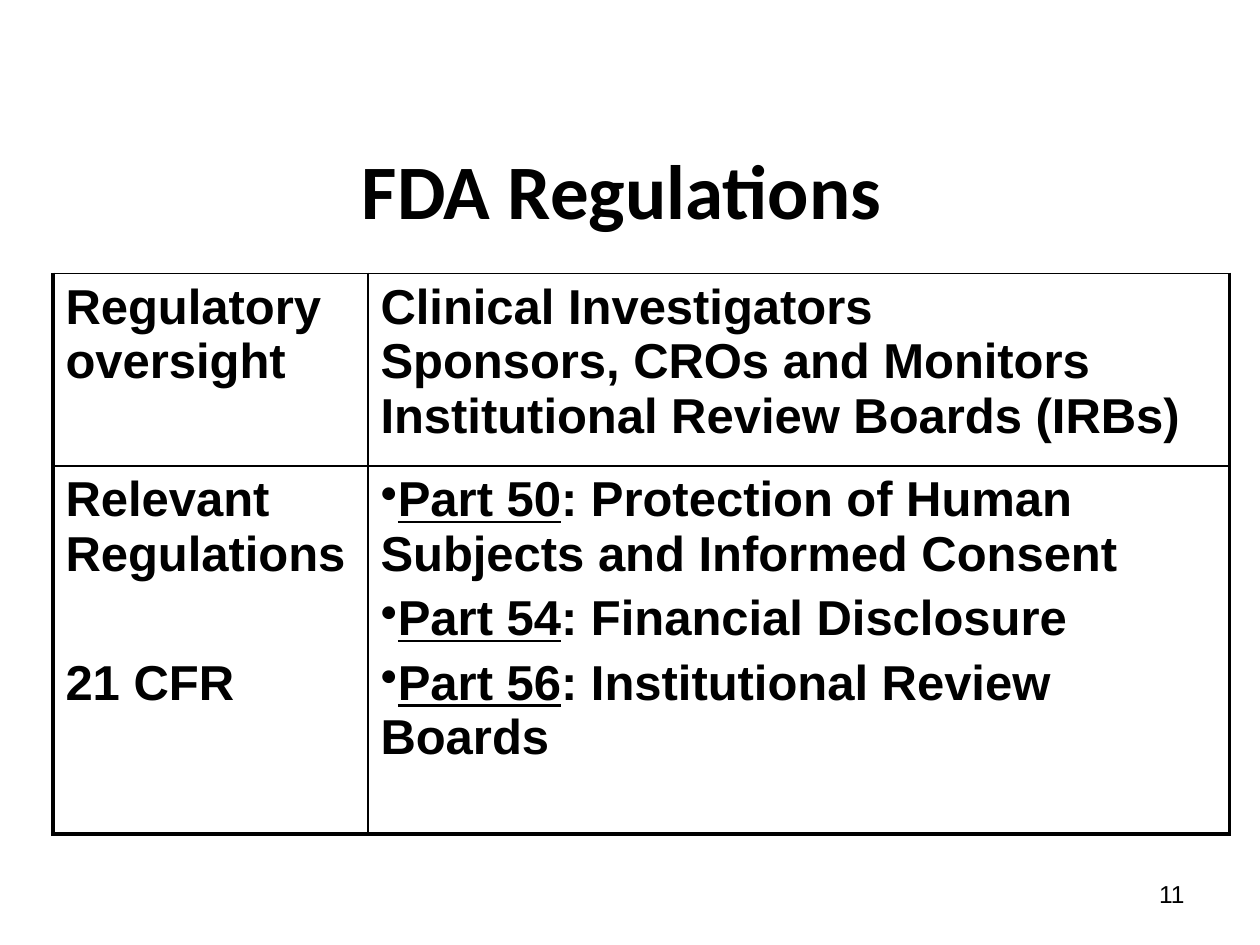
import pptx
import pptx.dml.color
import pptx.enum.text
import pptx.oxml
import pptx.oxml.ns
import pptx.util
from pptx.util import Inches, Pt

BLACK = "000000"
SPACE_BEFORE = 5.6
BLANK_LINE_GAP = 42.4


def style(paragraph, font_name, size, bold):
    paragraph.font.name = font_name
    paragraph.font.size = Pt(size)
    paragraph.font.bold = bold
    paragraph.font.color.rgb = pptx.dml.color.RGBColor.from_string(BLACK)


def add_xml(parent, index, xml):
    """Insert a DrawingML fragment into parent at the given child index."""
    namespace = pptx.oxml.ns.nsdecls("a")
    parent.insert(index, pptx.oxml.parse_xml(xml.replace(" ", f" {namespace} ", 1)))


deck = pptx.Presentation()
deck.slide_width = Inches(10)
deck.slide_height = Inches(7.5)
slide = deck.slides.add_slide(deck.slide_layouts[6])

# Title and page number: text, left, top, width, height, alignment, font, size, bold
align = pptx.enum.text.PP_ALIGN
labels = [
    ("11", 7.17, 6.83, 2.33, 0.52, align.RIGHT, "Arial", 14, False),
    ("FDA Regulations", 0.84, 1, 8.19, 1, align.CENTER, "Calibri", 44, True),
]
for text, left, top, width, height, alignment, font_name, size, bold in labels:
    box = slide.shapes.add_textbox(Inches(left), Inches(top), Inches(width), Inches(height))
    frame = box.text_frame
    frame.word_wrap = True
    frame.vertical_anchor = pptx.enum.text.MSO_ANCHOR.MIDDLE
    paragraph = frame.paragraphs[0]
    paragraph.text = text
    paragraph.alignment = alignment
    style(paragraph, font_name, size, bold)

# Each paragraph: underlined lead (makes it a bullet), text, space before in points
rows = [
    [
        [("", "Regulatory oversight", SPACE_BEFORE)],
        [
            ("", "Clinical Investigators", 0),
            ("", "Sponsors, CROs and Monitors", 0),
            ("", "Institutional Review Boards (IRBs)", 0),
        ],
    ],
    [
        [
            ("", "Relevant Regulations", SPACE_BEFORE),
            ("", "21 CFR", BLANK_LINE_GAP),
        ],
        [
            ("Part 50", ": Protection of Human Subjects and Informed Consent", SPACE_BEFORE),
            ("Part 54", ": Financial Disclosure", SPACE_BEFORE),
            ("Part 56", ": Institutional Review Boards", SPACE_BEFORE),
        ],
    ],
]
column_widths = [2.5, 6.84]
row_heights = [1.53, 2.92]

table = slide.shapes.add_table(
    len(rows), len(column_widths), Inches(0.42), Inches(2.17),
    Inches(sum(column_widths)), Inches(sum(row_heights)),
).table
table.first_row = False
table.horz_banding = False
for column, width in zip(table.columns, column_widths):
    column.width = Inches(width)
for row, height in zip(table.rows, row_heights):
    row.height = Inches(height)

for row_index, row in enumerate(rows):
    for column_index, paragraphs in enumerate(row):
        cell = table.cell(row_index, column_index)
        cell.margin_left = cell.margin_right = Inches(0.1)
        cell.margin_top = cell.margin_bottom = Inches(0.05)
        cell.fill.background()
        borders = [
            ("lnL", 2.25 if column_index == 0 else 1),
            ("lnR", 2.25 if column_index == 1 else 1),
            ("lnT", 1),
            ("lnB", 2.25 if row_index == 1 else 1),
        ]
        properties = cell._tc.get_or_add_tcPr()
        for index, (edge, width) in enumerate(borders):
            add_xml(properties, index,
                    f'<a:{edge} w="{Pt(width)}"><a:solidFill>'
                    f'<a:srgbClr val="{BLACK}"/></a:solidFill></a:{edge}>')

        frame = cell.text_frame
        for index, (lead, text, space_before) in enumerate(paragraphs):
            paragraph = frame.add_paragraph() if index else frame.paragraphs[0]
            paragraph.space_before = Pt(space_before)
            style(paragraph, "Arial", 28, True)
            if lead:
                span = paragraph.add_run()
                span.text = lead
                span.font.underline = True
                bullet_properties = paragraph._p.get_or_add_pPr()
                add_xml(bullet_properties, 1, '<a:buChar char="•"/>')
            paragraph.add_run().text = text

deck.save("out.pptx")
